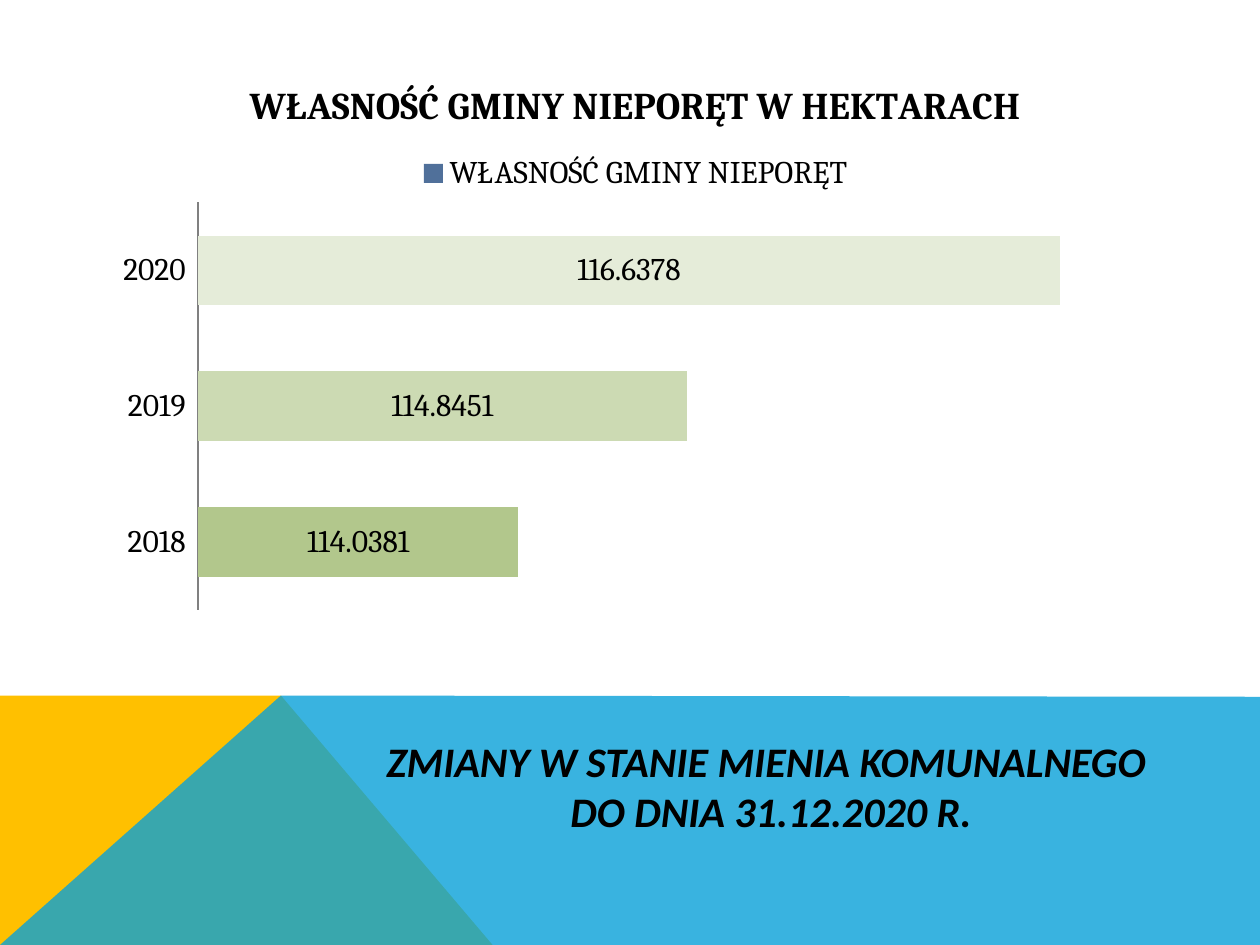
"""Builds the slide on changes in municipal property with a stacked bar chart."""
from typing import NamedTuple

from lxml.etree import SubElement
from pptx import Presentation
from pptx.chart.data import CategoryChartData
from pptx.dml.color import RGBColor
from pptx.enum.chart import XL_CHART_TYPE, XL_LEGEND_POSITION, XL_TICK_LABEL_POSITION, XL_TICK_MARK
from pptx.enum.text import MSO_ANCHOR, PP_ALIGN
from pptx.oxml import parse_xml
from pptx.oxml.ns import nsdecls, qn
from pptx.util import Inches, Pt

COLORS = {"gold": "FFC000", "blue": "08A1D9", "series": "50709A",
          "axis": "808080", "text": "000000"}


class Panel(NamedTuple):
    color: str
    points: list[tuple[float, float]]
    alpha: int = 100


class Bar(NamedTuple):
    year: str
    hectares: float
    color: str


PANELS = [
    Panel("gold", [(0, 7.5), (0, 5.52), (2.23, 5.52), (3.91, 7.5)]),
    Panel("blue", [(0, 7.5), (2.23, 5.52), (10, 5.53), (10, 7.5)], 80),
]
BARS = [
    Bar("2018", 114.0381, "B2C78C"),
    Bar("2019", 114.8451, "CCDAB3"),
    Bar("2020", 116.6378, "E5ECD9"),
]
PLOT = {"x": 0.08, "y": 0.26, "w": 0.9, "h": 0.72}


def rgb(name: str) -> RGBColor:
    return RGBColor.from_string(COLORS[name])


def draw_panel(s, panel: Panel) -> None:
    start, *rest = [(Inches(x), Inches(y)) for x, y in panel.points]
    builder = s.shapes.build_freeform(*start)
    builder.add_line_segments(rest, close=True)
    sp = builder.convert_to_shape()
    sp.shadow.inherit = False
    sp.line.fill.background()
    sp.fill.solid()
    sp.fill.fore_color.rgb = rgb(panel.color)
    if panel.alpha < 100:
        clr = sp.fill._xPr.find(".//" + qn("a:srgbClr"))
        SubElement(clr, qn("a:alpha"), val=str(panel.alpha * 1000))


def write_title(s, lines: list[str]) -> None:
    sp = s.shapes.title
    s.shapes._spTree.append(sp._element)
    sp.left, sp.top, sp.width, sp.height = Inches(2.01), Inches(5.8), Inches(8.22), Inches(0.87)
    tf = sp.text_frame
    tf.vertical_anchor = MSO_ANCHOR.MIDDLE
    p = tf.paragraphs[0]
    p.alignment = PP_ALIGN.CENTER
    for i, line in enumerate(lines):
        if i:
            p.add_line_break()
        r = p.add_run()
        r.text = line
        r.font.name, r.font.size = "Calibri", Pt(24)
        r.font.bold = r.font.italic = True
        r.font.color.rgb = rgb("text")


def place_plot(chart) -> None:
    area = chart._chartSpace.chart.plotArea
    for old in area.findall(qn("c:layout")):
        area.remove(old)
    sizes = "".join(f'<c:{key} val="{val}"/>' for key, val in PLOT.items())
    area.insert(0, parse_xml(
        f'<c:layout {nsdecls("c")}><c:manualLayout><c:layoutTarget val="inner"/>'
        f'<c:xMode val="edge"/><c:yMode val="edge"/>{sizes}</c:manualLayout></c:layout>'))


def draw_chart(s, bars: list[Bar]) -> None:
    data = CategoryChartData()
    data.categories = [bar.year for bar in bars]
    data.add_series("WŁASNOŚĆ GMINY NIEPORĘT", [bar.hectares for bar in bars])
    chart = s.shapes.add_chart(XL_CHART_TYPE.BAR_STACKED, Inches(0.91), Inches(0.44),
                               Inches(8.27), Inches(4.49), data).chart
    chart.font.name, chart.font.size = "Cambria", Pt(18)
    chart.font.color.rgb = rgb("text")

    chart.has_title = True
    r = chart.chart_title.text_frame.paragraphs[0].add_run()
    r.text = "WŁASNOŚĆ GMINY NIEPORĘT W HEKTARACH"
    r.font.name, r.font.size, r.font.bold = "Cambria", Pt(21.6), True
    r.font.color.rgb = rgb("text")
    chart.has_legend = True
    chart.legend.position = XL_LEGEND_POSITION.TOP
    chart.legend.include_in_layout = False

    years, values = chart.category_axis, chart.value_axis
    years.major_tick_mark = XL_TICK_MARK.NONE
    years.tick_label_position = XL_TICK_LABEL_POSITION.LOW
    years.format.line.color.rgb = rgb("axis")
    values.minimum_scale, values.maximum_scale = 112.5, 117
    values.has_major_gridlines = False
    values.visible = False

    plot = chart.plots[0]
    plot.gap_width, plot.overlap, plot.vary_by_categories = 95, 100, False
    plot.has_data_labels = True
    plot.data_labels.show_value = True
    series = plot.series[0]
    series.format.fill.solid()
    series.format.fill.fore_color.rgb = rgb("series")
    for i, bar in enumerate(bars):
        fill = series.points[i].format.fill
        fill.solid()
        fill.fore_color.rgb = RGBColor.from_string(bar.color)
    place_plot(chart)


def main() -> None:
    prs = Presentation()
    prs.slide_width, prs.slide_height = Inches(10), Inches(7.5)
    s = prs.slides.add_slide(prs.slide_layouts[5])
    for panel in PANELS:
        draw_panel(s, panel)
    write_title(s, ["ZMIANY W STANIE MIENIA KOMUNALNEGO ", "DO DNIA 31.12.2020 R."])
    draw_chart(s, BARS)
    prs.save("out.pptx")


if __name__ == "__main__":
    main()
